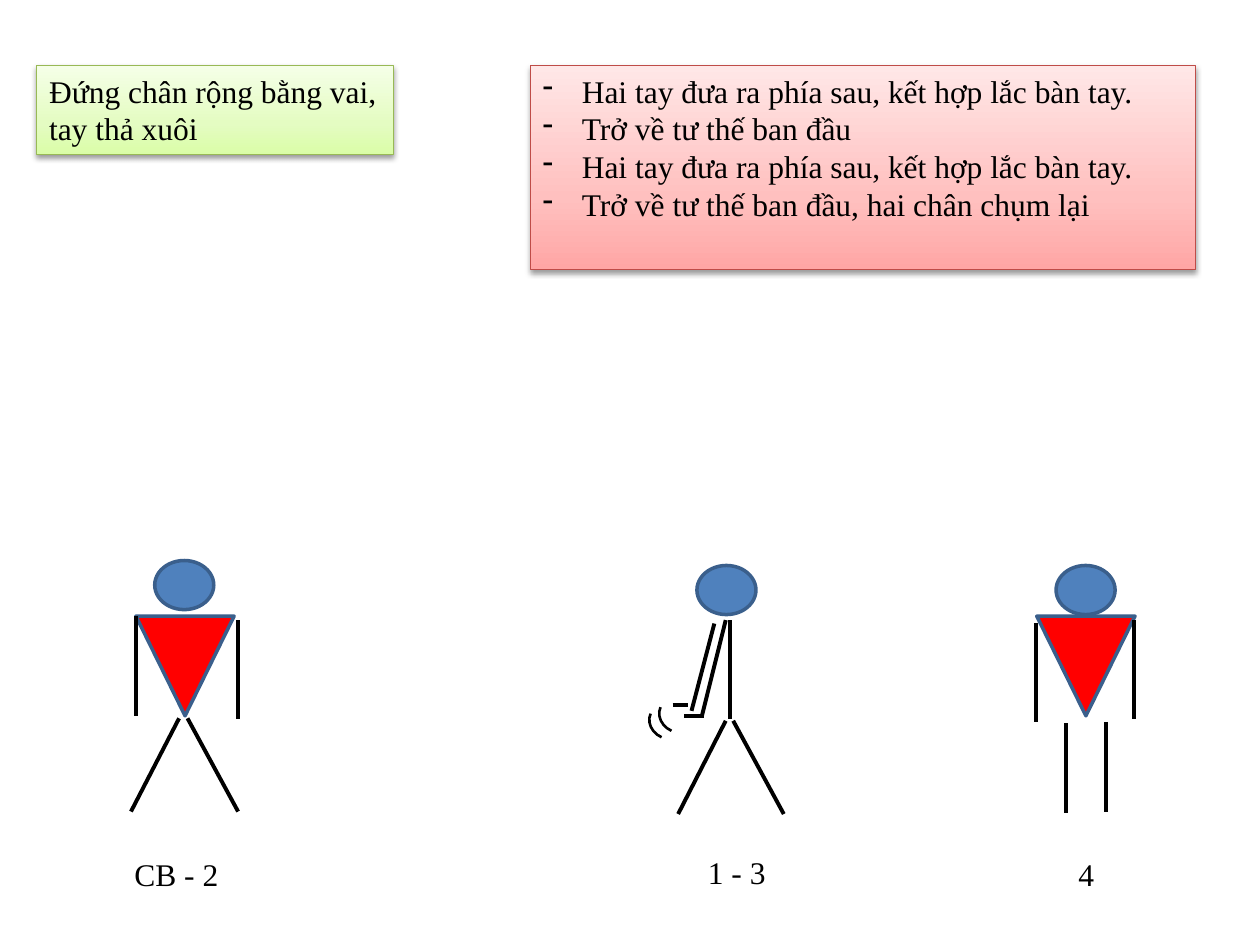
"""Build an exercise slide with two instruction boxes and three stick figures."""
import copy

import pptx
import pptx.dml.color
import pptx.enum.shapes
import pptx.enum.text
import pptx.oxml
import pptx.oxml.ns
import pptx.util
from pptx.util import Cm

SHAPE = pptx.enum.shapes.MSO_SHAPE
NAMESPACE = pptx.oxml.ns.nsdecls("a")


def colour(value):
    return pptx.dml.color.RGBColor.from_string(value)


def write_text(shape, text, bullet=None, size=18, font="Times New Roman", fill="000000"):
    frame = shape.text_frame
    frame.word_wrap = True
    frame.auto_size = pptx.enum.text.MSO_AUTO_SIZE.NONE
    frame.vertical_anchor = pptx.enum.text.MSO_ANCHOR.TOP
    frame.text = text
    for para in frame.paragraphs:
        para.alignment = pptx.enum.text.PP_ALIGN.LEFT
        span = para.runs[0]
        span.font.size = pptx.util.Pt(size)
        span.font.name = font
        span.font.color.rgb = colour(fill)
        if bullet:
            properties = para._p.get_or_add_pPr()
            properties.set("marL", str(Cm(0.79)))
            properties.set("indent", str(-Cm(0.79)))
            properties.append(pptx.oxml.parse_xml(f"<a:buFontTx {NAMESPACE}/>"))
            properties.append(pptx.oxml.parse_xml(f'<a:buChar {NAMESPACE} char="{bullet}"/>'))


deck = pptx.Presentation()
deck.slide_width, deck.slide_height = Cm(25.4), Cm(19.05)
slide = deck.slides.add_slide(deck.slide_layouts[6])
shapes = slide.shapes

arms_back = "Hai tay đưa ra phía sau, kết hợp lắc bàn tay."
steps = [arms_back, "Trở về tư thế ban đầu", arms_back, "Trở về tư thế ban đầu, hai chân chụm lại"]
instructions = [
    (0.74, 7.19, 1.8, ["DAFDA7", "E4FCC2", "F5FFE7"], "98B955", "Đứng chân rộng bằng vai, tay thả xuôi", None),
    (10.69, 13.41, 4.11, ["FFA6A5", "FFC0BF", "FFE7E7"], "BF4C48", "\n".join(steps), "-"),
]
for left, width, height, stops, outline, text, bullet in instructions:
    box = shapes.add_shape(SHAPE.RECTANGLE, Cm(left), Cm(1.32), Cm(width), Cm(height))
    box.fill.gradient()
    box.fill.gradient_angle = 90
    stop_list = box.fill._fill._gradFill.gsLst
    stop_list.append(copy.deepcopy(stop_list[-1]))
    for stop, position, value in zip(box.fill.gradient_stops, (0, 0.35, 1), stops):
        stop.position = position
        stop.color.rgb = colour(value)
    box.line.color.rgb = colour(outline)
    box.line.width = pptx.util.Pt(0.75)
    box.shadow.inherit = False
    effects = box._element.spPr.find(pptx.oxml.ns.qn("a:effectLst"))
    effects.append(pptx.oxml.parse_xml(
        f'<a:outerShdw {NAMESPACE} blurRad="40000" dist="20000" dir="5400000" rotWithShape="0">'
        '<a:srgbClr val="000000"><a:alpha val="38000"/></a:srgbClr></a:outerShdw>'))
    write_text(box, text, bullet=bullet)

head = (SHAPE.OVAL, 1.19, 0.99, 0, "4F81BD", "3A5F8C", 2)
torso = (SHAPE.ISOSCELES_TRIANGLE, 1.98, 2.01, 180, "FF0000", "3A5F8C", 2)
hand_shake = (SHAPE.ARC, 0.79, 0.69, 204, None, "000000", 1.5)
body_parts = [
    (head, [(3.12, 11.3), (14.05, 11.4), (21.29, 11.4)]),
    (torso, [(2.74, 12.42), (20.9, 12.42)]),
    (hand_shake, [(13.28, 14.07), (13.08, 14.2)]),
]
for (kind, width, height, rotation, fill, outline, weight), places in body_parts:
    for left, top in places:
        part = shapes.add_shape(kind, Cm(left), Cm(top), Cm(width), Cm(height))
        part.rotation = rotation
        part.shadow.inherit = False
        if fill:
            part.fill.solid()
            part.fill.fore_color.rgb = colour(fill)
        else:
            part.fill.background()
        part.line.color.rgb = colour(outline)
        part.line.width = pptx.util.Pt(weight)

front_wide_limbs = [
    (2.74, 12.42, 2.74, 14.43), (4.8, 12.5, 4.8, 14.5),
    (3.61, 14.48, 2.64, 16.36), (3.78, 14.48, 4.8, 16.36),
]
side_limbs = [
    (13.94, 14.33, 14.4, 12.57), (14.15, 14.43, 14.63, 12.5), (14.71, 12.5, 14.71, 14.5),
    (14.78, 14.53, 15.8, 16.41), (14.63, 14.53, 13.67, 16.41),
    (13.56, 14.22, 13.87, 14.22), (13.79, 14.43, 14.2, 14.43),
]
front_closed_limbs = [
    (20.88, 12.55, 20.88, 14.55), (22.86, 12.5, 22.86, 14.5),
    (21.49, 14.58, 21.49, 16.38), (22.3, 14.55, 22.3, 16.36),
]
for ends in front_wide_limbs + side_limbs + front_closed_limbs:
    limb = shapes.add_connector(pptx.enum.shapes.MSO_CONNECTOR.STRAIGHT, *map(Cm, ends))
    limb.line.color.rgb = colour("000000")
    limb.line.width = pptx.util.Pt(2.25)
    limb._element.spPr.append(pptx.oxml.parse_xml(f"<a:effectLst {NAMESPACE}/>"))

for text, left, top, width in [("CB - 2", 2.46, 17.12, 2.79), ("1 - 3", 14.02, 17.07, 1.78), ("4", 21.49, 17.12, 1.37)]:
    write_text(shapes.add_textbox(Cm(left), Cm(top), Cm(width), Cm(1.02)), text)

deck.save("out.pptx")
